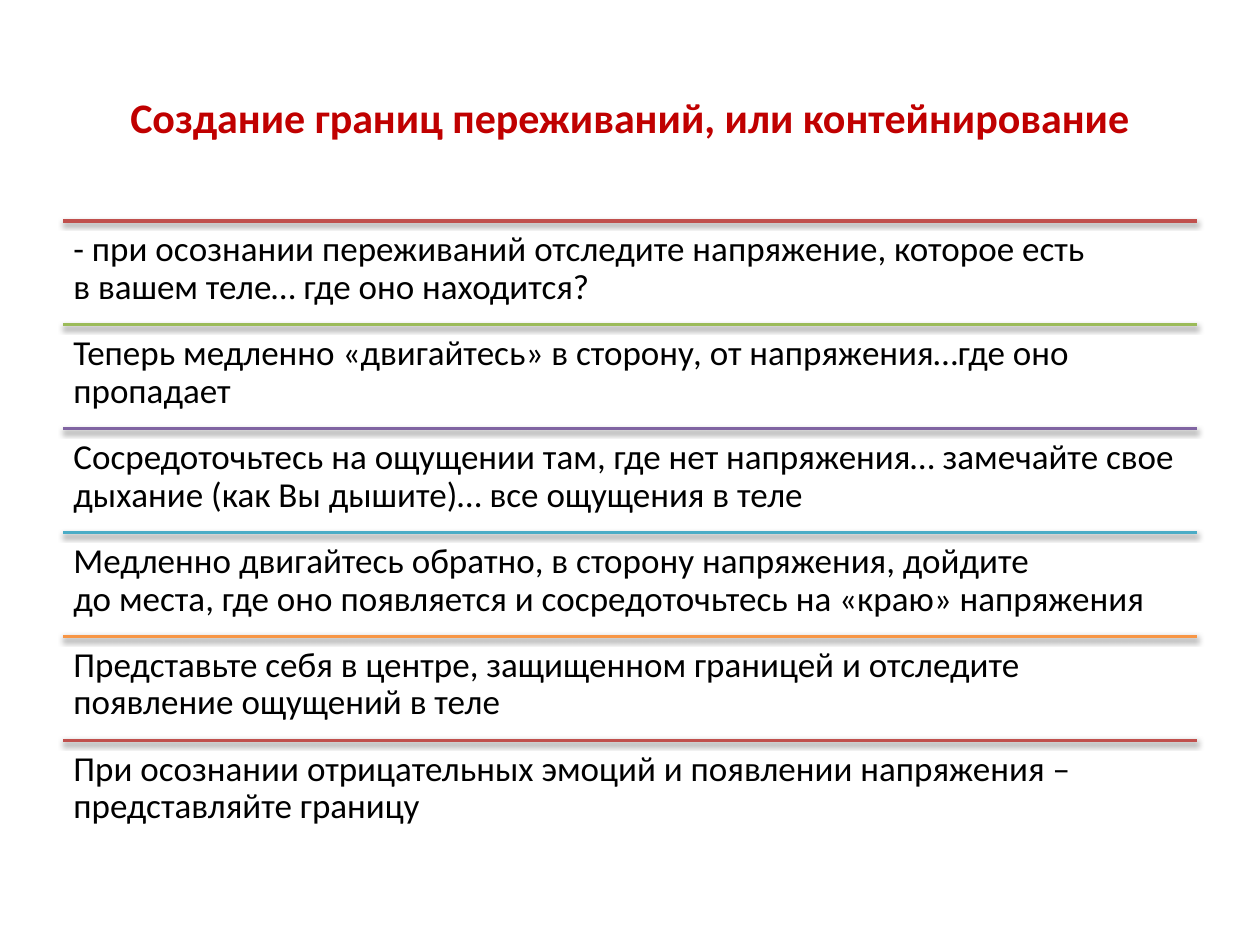
from dataclasses import dataclass

from lxml.etree import SubElement
from pptx import Presentation
from pptx.dml.color import RGBColor as Color
from pptx.enum.shapes import MSO_CONNECTOR as ConnectorType
from pptx.enum.text import MSO_ANCHOR as Anchor, PP_ALIGN as Align
from pptx.oxml.ns import qn
from pptx.slide import Slide
from pptx.util import Cm, Pt


@dataclass(frozen=True)
class Theme:
    font: str = "Calibri"
    title_size: int = 24
    body_size: int = 20
    line_width: int = 2
    title: str = "C00000"
    body: str = "000000"
    shadow: str = "000000"
    red: str = "C0504D"
    green: str = "9BBB59"
    purple: str = "8064A2"
    blue: str = "4BACC6"
    orange: str = "F79646"


@dataclass(frozen=True)
class Step:
    color: str
    lines: tuple[str, ...]


THEME = Theme()
LEFT, WIDTH = Cm(1.27), Cm(22.86)
LIST_TOP, LIST_HEIGHT = Cm(4.45), Cm(12.57)
INSET = Cm(0.21)
TITLE = "Создание границ переживаний, или контейнирование"
STEPS = (
    Step(THEME.red, (
        "- при осознании переживаний отследите напряжение, которое есть ",
        "в вашем теле… где оно находится?",
    )),
    Step(THEME.green, (
        "Теперь медленно «двигайтесь» в сторону, от напряжения…где оно пропадает",
    )),
    Step(THEME.purple, (
        "Сосредоточьтесь на ощущении там, где нет напряжения… замечайте свое "
        "дыхание (как Вы дышите)… все ощущения в теле",
    )),
    Step(THEME.blue, (
        "Медленно двигайтесь обратно, в сторону напряжения, дойдите",
        "до места, где оно появляется и сосредоточьтесь на «краю» напряжения",
    )),
    Step(THEME.orange, (
        "Представьте себя в центре, защищенном границей и отследите "
        "появление ощущений в теле",
    )),
    Step(THEME.red, (
        "При осознании отрицательных эмоций и появлении напряжения "
        "–представляйте границу",
    )),
)


def apply_format(target: object, values: dict[str, object]) -> None:
    for name, value in values.items():
        setattr(target, name, value)


def format_run(run, size: int, color: str, bold: bool = False) -> None:
    apply_format(run.font, {"name": THEME.font, "size": Pt(size), "bold": bold})
    run.font.color.rgb = Color.from_string(color)


def add_title(slide: Slide) -> None:
    title = slide.shapes.title
    apply_format(title, {
        "left": LEFT, "top": Cm(0.76), "width": WIDTH, "height": Cm(3.18),
    })
    title.text_frame.vertical_anchor = Anchor.MIDDLE
    paragraph = title.text_frame.paragraphs[0]
    paragraph.alignment = Align.CENTER
    run = paragraph.add_run()
    run.text = TITLE
    format_run(run, THEME.title_size, THEME.title, bold=True)


def add_divider(slide: Slide, top: int, color: str) -> None:
    divider = slide.shapes.add_connector(
        ConnectorType.STRAIGHT, LEFT, top, LEFT + WIDTH, top)
    divider.line.color.rgb = Color.from_string(color)
    divider.line.width = Pt(THEME.line_width)
    properties = divider.element.find(qn("p:spPr"))
    effects = SubElement(properties, qn("a:effectLst"))
    shadow = SubElement(effects, qn("a:outerShdw"), {
        "blurRad": "40000", "dist": "20000", "dir": "5400000", "rotWithShape": "0",
    })
    shade = SubElement(shadow, qn("a:srgbClr"), {"val": THEME.shadow})
    SubElement(shade, qn("a:alpha"), {"val": "38000"})


def add_step_text(slide: Slide, top: int, height: int, lines: tuple[str, ...]) -> None:
    box = slide.shapes.add_textbox(LEFT, top, WIDTH, height)
    apply_format(box.text_frame, {
        "word_wrap": True, "vertical_anchor": Anchor.TOP,
        "margin_left": INSET, "margin_top": INSET,
        "margin_right": INSET, "margin_bottom": INSET,
    })
    paragraph = box.text_frame.paragraphs[0]
    apply_format(paragraph, {
        "alignment": Align.LEFT, "line_spacing": 0.9, "space_after": Pt(7),
    })
    for index, line in enumerate(lines):
        if index:
            paragraph.add_line_break()
        run = paragraph.add_run()
        run.text = line
        format_run(run, THEME.body_size, THEME.body)


def main() -> None:
    presentation = Presentation()
    apply_format(presentation, {"slide_width": Cm(25.4), "slide_height": Cm(19.05)})
    slide = presentation.slides.add_slide(
        presentation.slide_layouts.get_by_name("Title Only"))
    add_title(slide)
    row_height = LIST_HEIGHT // len(STEPS)
    for index, step in enumerate(STEPS):
        top = LIST_TOP + index * row_height
        add_divider(slide, top, step.color)
        add_step_text(slide, top, row_height, step.lines)
    presentation.save("out.pptx")


if __name__ == "__main__":
    main()
